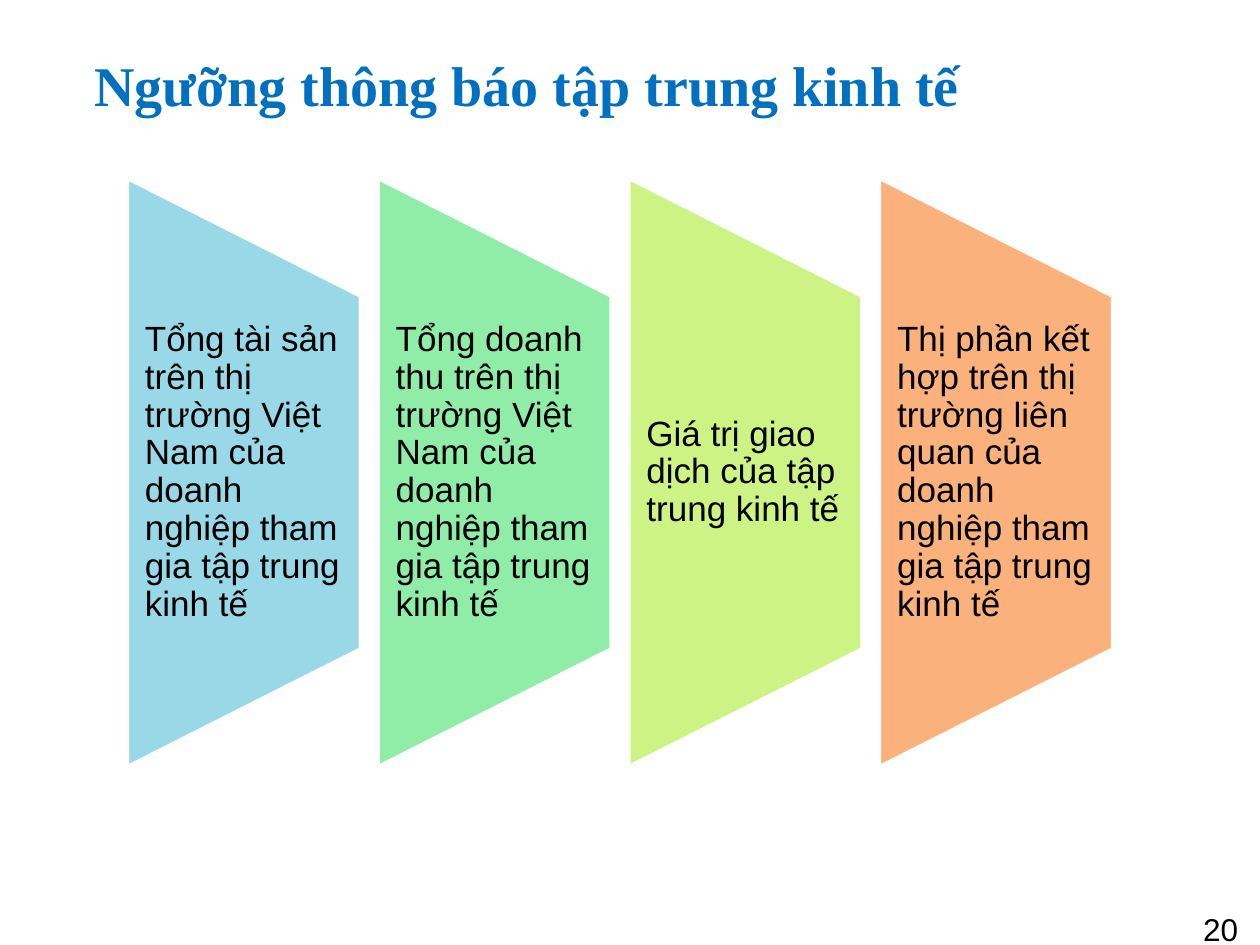
from dataclasses import dataclass

from pptx import Presentation
from pptx import util as u
from pptx.dml.color import RGBColor
from pptx.enum import shapes, text


@dataclass(frozen=True)
class Theme:
    title_font: str = "Times New Roman"
    body_font: str = "Arial"
    title_size: int = 32
    body_size: int = 20
    number_size: int = 18
    title_color: str = "0070C0"
    text_color: str = "000000"
    outline: str = "FFFFFF"
    panels: tuple = ("99D9E7", "8FEDA8", "CEF385", "FAB17B")


THEME = Theme()

THRESHOLDS = (
    "Tổng tài sản trên thị trường Việt Nam của doanh nghiệp tham gia tập trung kinh tế",
    "Tổng doanh thu trên thị trường Việt Nam của doanh nghiệp tham gia tập trung kinh tế",
    "Giá trị giao dịch của tập trung kinh tế",
    "Thị phần kết hợp trên thị trường liên quan của doanh nghiệp tham gia tập trung kinh tế",
)

PANEL_LEFT, PANEL_PITCH = 1.01, 1.99
PANEL_WIDTH, PANEL_HEIGHT = 1.85, 4.67
PANEL_MIDDLE = 3.75
LABEL_HEIGHT = 2.8


def add_text(s, box, words, font, size, color, insets=(0.1, 0.05),
             anchor=text.MSO_ANCHOR.MIDDLE):
    """Add a one-paragraph text box and return its paragraph."""
    tf = s.shapes.add_textbox(*map(u.Inches, box)).text_frame
    tf.word_wrap = True
    tf.vertical_anchor = anchor
    tf.margin_left = tf.margin_right = u.Inches(insets[0])
    tf.margin_top = tf.margin_bottom = u.Inches(insets[1])
    p = tf.paragraphs[0]
    p.text = words
    p.font.name = font
    p.font.size = u.Pt(size)
    p.font.color.rgb = RGBColor.from_string(color)
    return p


def add_title(s, words):
    p = add_text(s, (0.75, 0.17, 8.08, 0.99), words, THEME.title_font,
                 THEME.title_size, THEME.title_color, insets=(0, 0.05))
    p.font.bold = True
    p.space_before = p.space_after = u.Pt(6)


def add_panel(s, left, words, fill):
    """Add a trapezoid turned on its side, with an upright label over it."""
    center = left + PANEL_WIDTH / 2
    sp = s.shapes.add_shape(
        shapes.MSO_SHAPE.FLOWCHART_MANUAL_OPERATION,
        u.Inches(center - PANEL_HEIGHT / 2),
        u.Inches(PANEL_MIDDLE - PANEL_WIDTH / 2),
        u.Inches(PANEL_HEIGHT), u.Inches(PANEL_WIDTH))
    sp.rotation = 270
    sp.shadow.inherit = False
    sp.fill.solid()
    sp.fill.fore_color.rgb = RGBColor.from_string(fill)
    sp.line.color.rgb = RGBColor.from_string(THEME.outline)
    sp.line.width = u.Pt(2)

    box = (left, PANEL_MIDDLE - LABEL_HEIGHT / 2, PANEL_WIDTH, LABEL_HEIGHT)
    p = add_text(s, box, words, THEME.body_font, THEME.body_size,
                 THEME.text_color, insets=(0.14, 0))
    p.line_spacing = 0.9


def add_page_number(s, number):
    add_text(s, (9.45, 7.17, 0.55, 0.33), number, THEME.body_font,
             THEME.number_size, THEME.text_color, anchor=text.MSO_ANCHOR.TOP)


def main():
    prs = Presentation()
    prs.slide_width, prs.slide_height = u.Inches(10), u.Inches(7.5)
    s = prs.slides.add_slide(prs.slide_layouts[6])
    add_title(s, "Ngưỡng thông báo tập trung kinh tế")
    for i, (words, fill) in enumerate(zip(THRESHOLDS, THEME.panels)):
        add_panel(s, PANEL_LEFT + i * PANEL_PITCH, words, fill)
    add_page_number(s, "20")
    prs.save("out.pptx")


if __name__ == "__main__":
    main()
